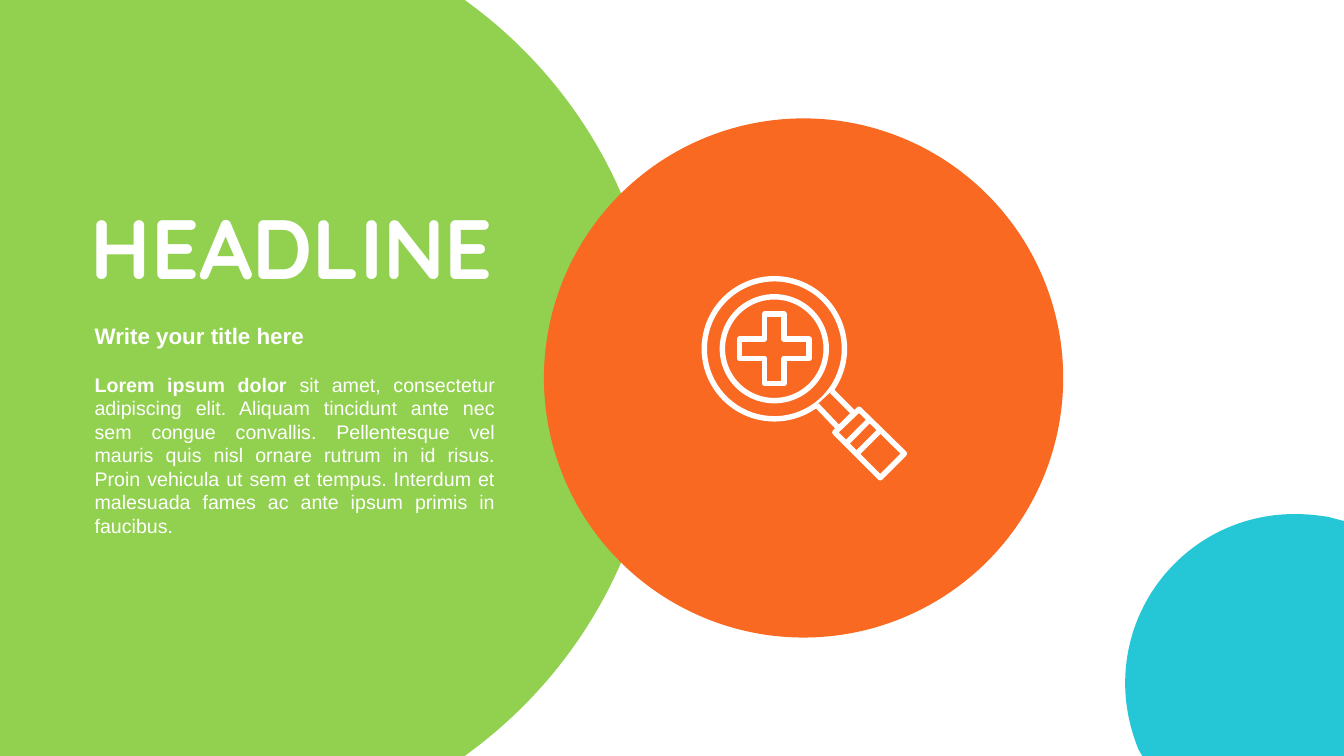
from dataclasses import dataclass

from lxml import etree
from pptx import Presentation
from pptx.dml.color import RGBColor
from pptx.enum import shapes, text
from pptx.oxml import ns
from pptx import util as u

SLIDE_W, SLIDE_H = 13.33, 7.5


@dataclass(frozen=True)
class Theme:
    green: str = "92D050"
    orange: str = "FA6921"
    teal: str = "25C7D7"
    white: str = "FFFFFF"
    body_font: str = "Arial"
    headline_font: str = "Quicksand"
    headline: int = 60
    title: int = 16
    body: int = 14
    stroke: float = 3.88


class SlideBuilder:
    def __init__(self, slide, theme):
        self.slide, self.theme = slide, theme
        self.layer = slide.shapes

    def start_group(self):
        self.layer = self.slide.shapes.add_group_shape().shapes

    def outline(self, item):
        item.line.color.rgb = RGBColor.from_string(self.theme.white)
        item.line.width = u.Pt(self.theme.stroke)
        etree.SubElement(item.line._get_or_add_ln(), ns.qn("a:round"))

    def paint(self, item, color, outlined):
        item.shadow.inherit = False
        item.fill.solid()
        item.fill.fore_color.rgb = RGBColor.from_string(color)
        if outlined:
            self.outline(item)
        else:
            item.line.fill.background()
        return item

    def preset(self, kind, cx, cy, size, color, outlined=False):
        item = self.layer.add_shape(
            kind, u.Inches(cx - size / 2), u.Inches(cy - size / 2),
            u.Inches(size), u.Inches(size))
        return self.paint(item, color, outlined)

    def freeform(self, steps, color, outlined=False, close=True):
        """A step is (x, y) for a line, or six numbers for a Bezier curve."""
        steps = [[u.Inches(n) for n in step] for step in steps]
        ends = [step[-2:] for step in steps]
        pen = self.layer.build_freeform(*ends[0])
        pen.add_line_segments(ends[1:], close=close)
        item = pen.convert_to_shape()
        left, top = (min(axis) for axis in zip(*ends))
        segments = list(item._element.iter(ns.qn("a:lnTo")))
        for segment, step in zip(segments, steps[1:]):
            if len(step) == 6:
                segment.clear()
                segment.tag = ns.qn("a:cubicBezTo")
                for x, y in zip(step[::2], step[1::2]):
                    etree.SubElement(segment, ns.qn("a:pt"),
                                     x=str(x - left), y=str(y - top))
        return self.paint(item, color, outlined)

    def line(self, start, end):
        item = self.layer.add_connector(
            shapes.MSO_CONNECTOR.STRAIGHT, *map(u.Inches, start + end))
        self.outline(item)
        etree.SubElement(item._element.spPr, ns.qn("a:effectLst"))

    def text(self, box, paragraphs):
        """Each paragraph is (paragraph format, [(words, font format)])."""
        frame = self.layer.add_textbox(*map(u.Inches, box)).text_frame
        frame.word_wrap = True
        frame.auto_size = text.MSO_AUTO_SIZE.SHAPE_TO_FIT_TEXT
        for i, (layout, runs) in enumerate(paragraphs):
            para = frame.add_paragraph() if i else frame.paragraphs[0]
            for key, value in layout.items():
                setattr(para, key, value)
            for words, style in runs:
                run = para.add_run()
                run.text = words
                run.font.color.rgb = RGBColor.from_string(self.theme.white)
                for key, value in style.items():
                    setattr(run.font, key, value)


def main():
    theme = Theme()
    deck = Presentation()
    deck.slide_width, deck.slide_height = u.Inches(SLIDE_W), u.Inches(SLIDE_H)
    page = SlideBuilder(deck.slides.add_slide(deck.slide_layouts[6]), theme)

    # Background circles, cut off at the slide edges
    page.freeform([(0, 0), (4.61, 0), (4.69, 0.06),
                   (5.81, 0.9, 6.54, 2.24, 6.54, 3.75),
                   (6.54, 5.26, 5.81, 6.6, 4.69, 7.44),
                   (4.61, SLIDE_H), (0, SLIDE_H)], theme.green)
    page.preset(shapes.MSO_SHAPE.OVAL, 7.97, SLIDE_H / 2, 5.15, theme.orange)
    page.freeform([(SLIDE_W, 5.17), (SLIDE_W, SLIDE_H), (11.33, SLIDE_H),
                   (11.29, 7.43),
                   (11.21, 7.23, 11.16, 7.01, 11.16, 6.78),
                   (11.16, 5.85, 11.91, 5.1, 12.84, 5.1),
                   (12.95, 5.1, 13.07, 5.11, 13.18, 5.13)], theme.teal)

    # Title and body text
    justified = {"alignment": text.PP_ALIGN.JUSTIFY}
    title = {"name": theme.body_font, "size": u.Pt(theme.title), "bold": True}
    lead = {**title, "size": u.Pt(theme.body)}
    body = {**lead, "bold": False}
    page.text((0.84, 3.15, 4.17, 2.49), [
        (justified, [("Write your title here", title)]),
        ({**justified, "space_before": u.Pt(16.5)}, [
            ("Lorem ipsum dolor ", lead),
            ("sit amet, consectetur adipiscing elit. Aliquam tincidunt ante "
             "nec sem congue convallis. Pellentesque vel mauris quis nisl "
             "ornare rutrum in id risus. Proin vehicula ut sem et tempus. "
             "Interdum et malesuada fames ac ante ipsum primis in faucibus.",
             body)])])

    # Headline
    headline = {"name": theme.headline_font, "size": u.Pt(theme.headline),
                "bold": True}
    page.text((0.8, 1.89, 5.59, 1.11), [({}, [("HEADLINE", headline)])])

    # Magnifier: lens rings and plus sign
    page.start_group()
    lens = (7.68, 3.46)
    for diameter in (1.39, 1.03):
        page.preset(shapes.MSO_SHAPE.OVAL, *lens, diameter, theme.orange, True)
    plus = page.preset(shapes.MSO_SHAPE.CROSS, *lens, 0.69, theme.orange, True)
    plus.adjustments[0] = 0.36

    # Magnifier: neck, grip and grip bands
    neck = [(8.1, 4.02), (8.32, 4.25), (8.47, 4.1), (8.25, 3.88)]
    page.freeform(neck, theme.orange, True, close=False)
    grip = [(8.97, 4.5), (8.52, 4.06), (8.28, 4.29), (8.73, 4.74)]
    page.freeform(grip, theme.orange, True)
    for x, y in ((8.49, 4.51), (8.39, 4.4)):
        page.line((x, y), (x + 0.23, y - 0.23))

    deck.save("out.pptx")


if __name__ == "__main__":
    main()
